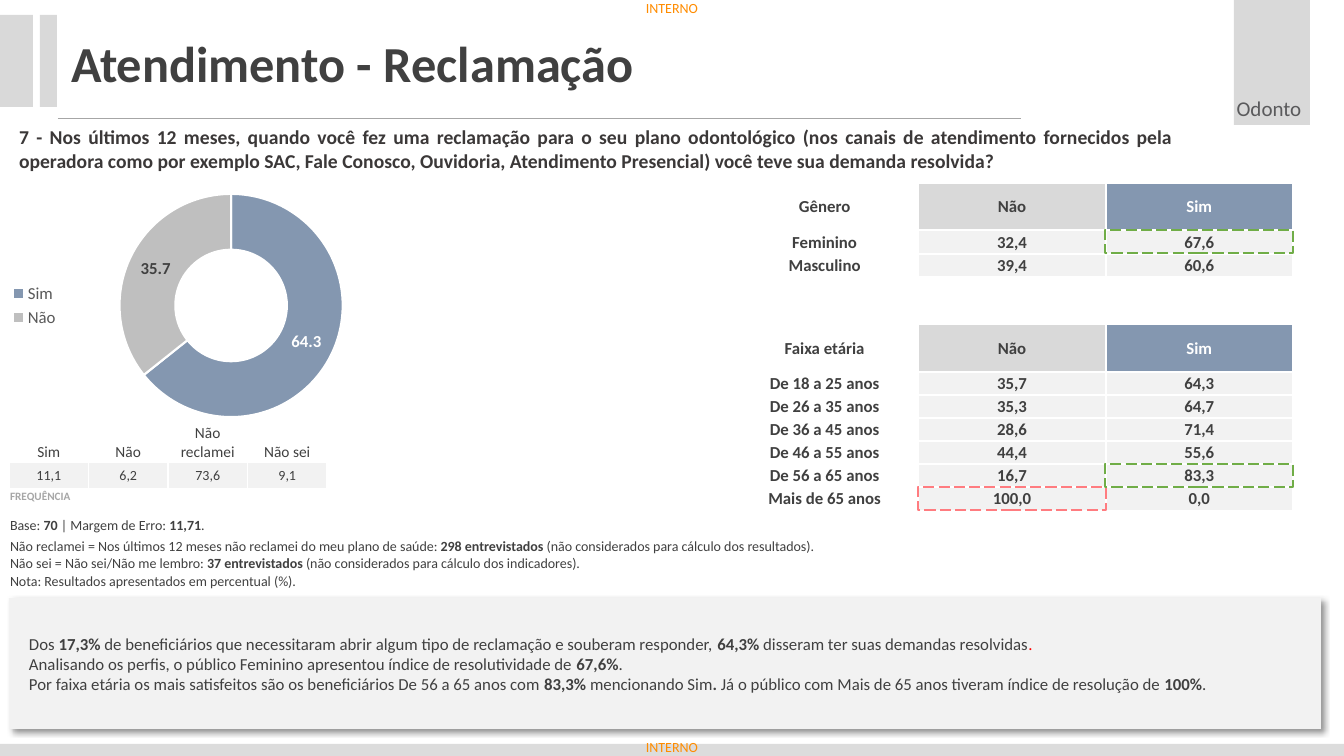
from lxml import etree
from pptx import Presentation
from pptx import util as u
from pptx.chart import data as chart_data
from pptx.dml.color import RGBColor
from pptx.enum import chart as chart_enum, dml, shapes, text
from pptx.oxml import parse_xml
from pptx.oxml.ns import nsdecls, qn

FONT = "Calibri"
DARK, GREY, PALE, BLUE, WHITE = "404040", "D9D9D9", "F2F2F2", "8497B0", "FFFFFF"
LEFT, CENTER, JUSTIFY = text.PP_ALIGN.LEFT, text.PP_ALIGN.CENTER, text.PP_ALIGN.JUSTIFY
TOP, MIDDLE, BOTTOM = text.MSO_ANCHOR.TOP, text.MSO_ANCHOR.MIDDLE, text.MSO_ANCHOR.BOTTOM
color = RGBColor.from_string


def px(*lengths):
    return [u.Emu(round(length * 914400 / 100.8)) for length in lengths]


def write(frame, content, size, fill=DARK, align=LEFT, bold=False):
    """Fill a text frame line by line; parts between ** marks are bold."""
    for number, line in enumerate(content.split("\n")):
        paragraph = frame.add_paragraph() if number else frame.paragraphs[0]
        paragraph.alignment = align
        if not line:
            etree.SubElement(paragraph._p, qn("a:endParaRPr"), sz=str(size * 100))
            continue
        for part, words in enumerate(line.split("**")):
            run = paragraph.add_run()
            run.text = words
            run.font.name = FONT
            run.font.size = u.Pt(size)
            run.font.bold = bold or part % 2 == 1
            run.font.color.rgb = color(fill)


presentation = Presentation()
presentation.slide_width, presentation.slide_height = px(1344, 756)
slide = presentation.slides.add_slide(presentation.slide_layouts[5])

# Background bars and title rule
for box, fill in [
    ((0, 744, 1344, 12), "DCDCDC"),
    ((0, 15, 33, 92), GREY),
    ((40, 15, 17, 92), GREY),
    ((1234, 0, 76, 125), GREY),
]:
    bar = slide.shapes.add_shape(shapes.MSO_SHAPE.RECTANGLE, *px(*box))
    bar.shadow.inherit = False
    bar.fill.solid()
    bar.fill.fore_color.rgb = color(fill)
    bar.line.fill.background()

rule = slide.shapes.add_connector(shapes.MSO_CONNECTOR.STRAIGHT, *px(58, 118, 1021, 118))
rule.line.color.rgb = color("A6A6A6")
rule.line.width = u.Pt(0.5)
etree.SubElement(rule._element.spPr, qn("a:effectLst"))

# Title, question and labels
title = slide.shapes.title
title.left, title.top, title.width, title.height = px(61, 27, 589, 71)
title.text_frame.auto_size = text.MSO_AUTO_SIZE.NONE
title.text_frame.vertical_anchor = MIDDLE
title.text_frame.margin_right = 0
write(title.text_frame, "Atendimento - Reclamação", 36, bold=True)

question = (
    "7 - Nos últimos 12 meses, quando você fez uma reclamação para o seu plano odontológico "
    "(nos canais de atendimento fornecidos pela operadora como por exemplo SAC, Fale Conosco, "
    "Ouvidoria, Atendimento Presencial) você teve sua demanda resolvida?"
)
for box, margins, content, size, fill, align, bold in [
    ((646, 0, 60, 17), (0, 0), "INTERNO", 10, "FF8C00", LEFT, False),
    ((646, 739, 60, 17), (0, 0), "INTERNO", 10, "FF8C00", LEFT, False),
    ((8, 119, 1176, 58), (11, 6), question, 14, "3B3838", JUSTIFY, True),
    ((1220, 91, 98, 35), (10, 5), "Odonto", 15, "5A5A5C", CENTER, False),
]:
    frame = slide.shapes.add_textbox(*px(*box)).text_frame
    frame.word_wrap = True
    frame.margin_left, frame.margin_top = px(*margins)
    frame.margin_right, frame.margin_bottom = px(*margins)
    write(frame, content, size, fill, align, bold)

# Findings panel
panel = slide.shapes.add_shape(shapes.MSO_SHAPE.RECTANGLE, *px(9, 598, 1312, 131))
panel.shadow.inherit = False
panel.fill.solid()
panel.fill.fore_color.rgb = color(PALE)
panel.line.fill.background()
panel._element.spPr.find(qn("a:effectLst")).append(parse_xml(
    f'<a:outerShdw {nsdecls("a")} blurRad="50800" dist="38100" dir="2700000" algn="tl" '
    'rotWithShape="0"><a:srgbClr val="000000"><a:alpha val="40000"/></a:srgbClr></a:outerShdw>'
))
frame = panel.text_frame
frame.word_wrap = True
frame.vertical_anchor = MIDDLE
frame.margin_left, frame.margin_right = px(20, 20)
write(
    frame,
    "Dos **17,3%** de beneficiários que necessitaram abrir algum tipo de reclamação e souberam "
    "responder,** 64,3%** disseram ter suas demandas resolvidas\n"
    "Analisando os perfis, o público Feminino apresentou índice de resolutividade de **67,6%**.\n"
    "Por faixa etária os mais satisfeitos são os beneficiários De 56 a 65 anos com** 83,3% **"
    "mencionando Sim**. **Já o público com Mais de 65 anos tiveram índice de resolução de **100%**.",
    12, align=JUSTIFY,
)
red_stop = frame.paragraphs[0].add_run()
red_stop.text = "."
red_stop.font.name = FONT
red_stop.font.size = u.Pt(12)
red_stop.font.color.rgb = color("FF0000")

# Tables: each row style is size, colours, alignment, anchor, bold and fills by column
styles = {
    "note": (10, [DARK] * 2, LEFT, TOP, False, [None] * 2),
    "answer": (11, [DARK] * 4, CENTER, BOTTOM, False, [None] * 4),
    "share": (10, [DARK] * 4, CENTER, MIDDLE, False, [PALE] * 4),
    "caption": (8, ["A6A6A6"] * 4, LEFT, TOP, True, [None] * 4),
    "head": (12, [DARK, DARK, WHITE], CENTER, MIDDLE, True, [None, GREY, BLUE]),
    "profile": (12, [DARK] * 3, CENTER, MIDDLE, True, [None, PALE, PALE]),
    "gap": (12, [DARK] * 3, CENTER, MIDDLE, True, [None] * 3),
}
# None marks a cell that the first cell of its row spans
notes = [
    ("note", 21, ["Base: **70 **| Margem de Erro: **11,71**.", None]),
    ("note", 35, [
        "Não reclamei = Nos últimos 12 meses não reclamei do meu plano de saúde: "
        "**298 entrevistados **(não considerados para cálculo dos resultados).\n"
        "Não sei = Não sei/Não me lembro: **37 entrevistados** "
        "(não considerados para cálculo dos indicadores).", None
    ]),
    ("note", 21, ["Nota: Resultados apresentados em percentual (%).", ""]),
]
frequency = [
    ("answer", 39, ["Sim", "Não", "Não reclamei", "Não sei"]),
    ("share", 27, ["11,1", "6,2", "73,6", "9,1"]),
    ("caption", 20, ["FREQUÊNCIA", None, None, ""]),
]
profiles = [
    ("head", 47, ["Gênero", "Não", "Sim"]),
    ("profile", 24, ["Feminino", "32,4", "67,6"]),
    ("profile", 23, ["Masculino", "39,4", "60,6"]),
    ("gap", 47, ["", "", ""]),
    ("head", 48, ["Faixa etária", "Não", "Sim"]),
    ("profile", 23, ["De 18 a 25 anos", "35,7", "64,3"]),
    ("profile", 23, ["De 26 a 35 anos", "35,3", "64,7"]),
    ("profile", 23, ["De 36 a 45 anos", "28,6", "71,4"]),
    ("profile", 23, ["De 46 a 55 anos", "44,4", "55,6"]),
    ("profile", 23, ["De 56 a 65 anos", "16,7", "83,3"]),
    ("profile", 24, ["Mais de 65 anos", "100,0", "0,0"]),
]
for left, top, width, border, rows in [
    (9, 516, 821, 1, notes),
    (9, 423, 318, 1, frequency),
    (731, 183, 562, 1.5, profiles),
]:
    column_count = len(rows[0][2])
    height = sum(row[1] for row in rows)
    table = slide.shapes.add_table(len(rows), column_count, *px(left, top, width, height)).table
    table.first_row = table.horz_banding = False
    for row_number, (style, row_height, texts) in enumerate(rows):
        size, colors, align, anchor, bold, fills = styles[style]
        table.rows[row_number].height = px(row_height)[0]
        if None in texts:
            table.cell(row_number, 0).merge(table.cell(row_number, texts.count(None)))
        for column_number, (content, fill) in enumerate(zip(texts, fills)):
            cell = table.cell(row_number, column_number)
            cell.margin_left, cell.margin_right, cell.margin_top, cell.margin_bottom = px(1, 1, 1, 0)
            cell.vertical_anchor = anchor
            if fill:
                cell.fill.solid()
                cell.fill.fore_color.rgb = color(fill)
            else:
                cell.fill.background()
            for position, edge in enumerate(["lnL", "lnR", "lnT", "lnB"]):
                cell._tc.get_or_add_tcPr().insert(position, parse_xml(
                    f'<a:{edge} {nsdecls("a")} w="{u.Pt(border)}"><a:solidFill>'
                    f'<a:srgbClr val="{WHITE}"/></a:solidFill></a:{edge}>'
                ))
            write(cell.text_frame, content or "", size, colors[column_number], align, bold)

# Dashed marks on the highest values
for left, top, line_color in [(1105, 464, "70AD47"), (918, 487, "FF7C80"), (1105, 230, "70AD47")]:
    mark = slide.shapes.add_shape(shapes.MSO_SHAPE.RECTANGLE, *px(left, top, 188, 23))
    mark.shadow.inherit = False
    mark.fill.background()
    mark.line.color.rgb = color(line_color)
    mark.line.width = u.Pt(1)
    mark.line.dash_style = dml.MSO_LINE.LONG_DASH

# Doughnut chart
answers = chart_data.CategoryChartData(number_format="0.0")
answers.categories = ["Sim", "Não"]
answers.add_series("Series 1", [64.3, 35.7])
chart = slide.shapes.add_chart(chart_enum.XL_CHART_TYPE.DOUGHNUT, *px(0, 180, 401, 251), answers).chart
chart.has_title = False
chart.font.name = FONT
chart.font.size = u.Pt(10)
chart.has_legend = True
chart.legend.position = chart_enum.XL_LEGEND_POSITION.LEFT
chart.legend.include_in_layout = False
plot = chart.plots[0]
plot.vary_by_categories = True
plot.has_data_labels = True
plot.data_labels.show_value = True
plot.data_labels.show_percentage = False
plot.data_labels.number_format = "0.0"
plot.data_labels.number_format_is_linked = False
chart_fonts = [(chart.legend.font, "595959", False), (plot.data_labels.font, WHITE, True)]
for number, (fill, label_color) in enumerate([(BLUE, WHITE), ("BFBFBF", DARK)]):
    point = plot.series[0].points[number]
    point.format.fill.solid()
    point.format.fill.fore_color.rgb = color(fill)
    point.format.line.color.rgb = color(WHITE)
    point.format.line.width = u.Pt(1.5)
    chart_fonts.append((point.data_label.font, label_color, True))
for font, fill, bold in chart_fonts:
    font.name = FONT
    font.size = u.Pt(12)
    font.bold = bold
    font.color.rgb = color(fill)

presentation.save("out.pptx")
